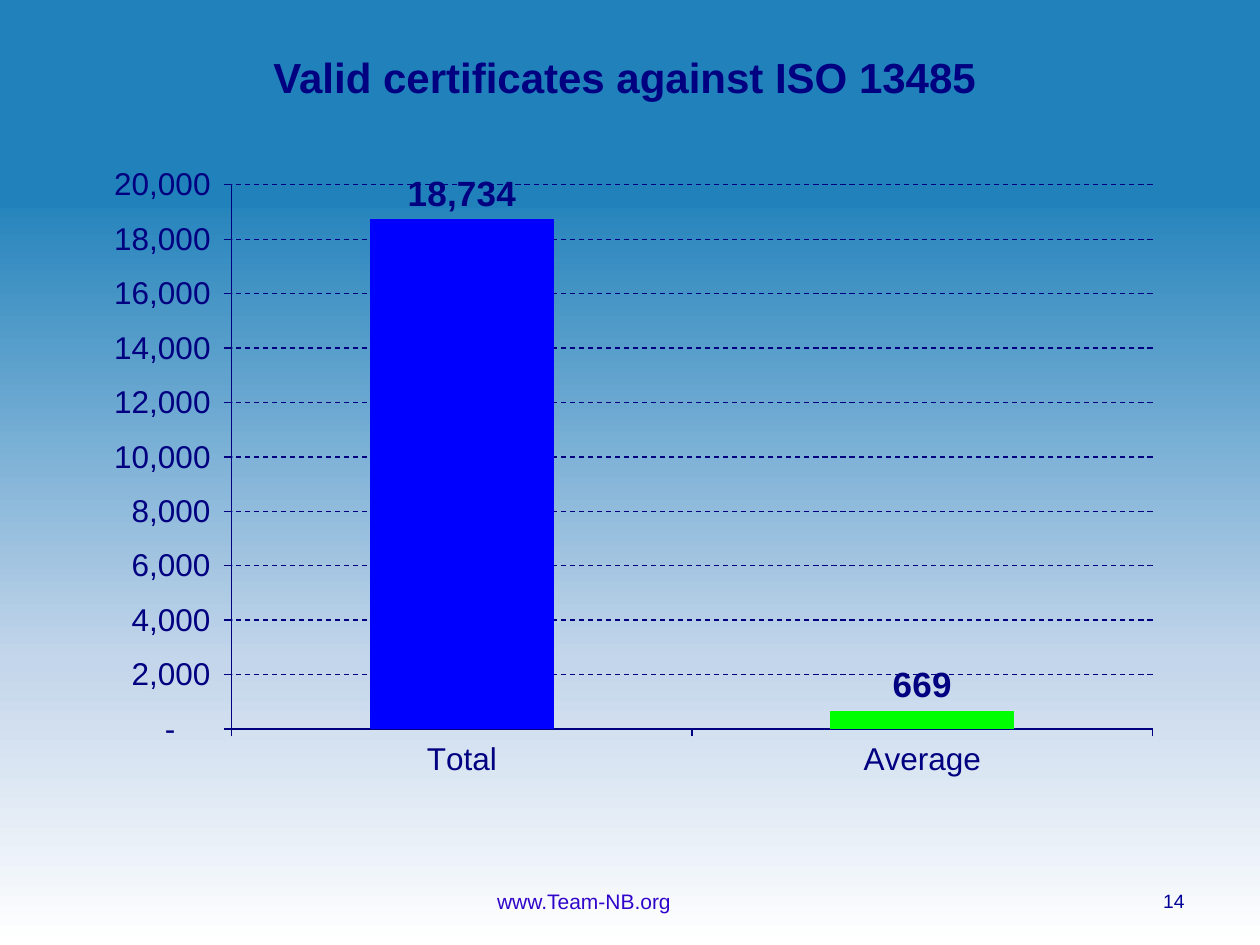
from copy import deepcopy
from dataclasses import dataclass

from lxml.etree import SubElement
from pptx import Presentation
from pptx.chart.data import CategoryChartData
from pptx.dml.color import RGBColor
from pptx.enum.chart import XL_CHART_TYPE as ChartType
from pptx.enum.chart import XL_LABEL_POSITION as LabelPosition
from pptx.enum.chart import XL_TICK_MARK as TickMark
from pptx.enum.dml import MSO_LINE as Dash
from pptx.enum.shapes import MSO_SHAPE as Shape
from pptx.enum.text import MSO_ANCHOR as Anchor
from pptx.enum.text import PP_ALIGN as Align
from pptx.oxml.ns import qn
from pptx.util import Inches, Pt


@dataclass(frozen=True)
class Theme:
    font: str = "Arial"
    navy: str = "000080"
    band: str = "2182BB"
    link: str = "2F05CB"
    number: str = "000099"
    bars: tuple = ("0000FF", "00FF00")
    backdrop: tuple = ((20, "2182BB"), (70, "C4D6EB"), (100, "FFFFFF"))
    title_size: int = 24
    label_size: int = 20
    axis_size: int = 18
    footer_size: int = 12
    number_size: int = 11


THEME = Theme()
NUMBER_FORMAT = r'_ * #,##0_ ;_ * \-#,##0_ ;_ * "-"??_ ;_ '


def color(code):
    return RGBColor.from_string(code)


def style_font(font, size, code, bold=False):
    font.name = THEME.font
    font.size = Pt(size)
    font.bold = bold
    font.color.rgb = color(code)


def style_line(line, code, width):
    line.color.rgb = color(code)
    line.width = Pt(width)


def set_backdrop(page):
    """Fill the page with a gradient running from top to bottom."""
    fill = page.background.fill
    fill.gradient()
    fill.gradient_angle = 270
    stop_list = page.element.find(".//" + qn("a:gsLst"))
    stop_list.append(deepcopy(stop_list[0]))
    for stop, (percent, code) in zip(fill.gradient_stops, THEME.backdrop):
        stop.position = percent / 100
        stop.color.rgb = color(code)


def add_band(page, width, height):
    band = page.shapes.add_shape(Shape.RECTANGLE, 0, 0, width, height)
    band.shadow.inherit = False
    band.fill.solid()
    band.fill.fore_color.rgb = color(THEME.band)
    style_line(band.line, THEME.band, 2)


def add_text(page, text, place, size, code, align, anchor=Anchor.MIDDLE, bold=False):
    box = page.shapes.add_textbox(*map(Inches, place))
    frame = box.text_frame
    frame.word_wrap = True
    frame.vertical_anchor = anchor
    para = frame.paragraphs[0]
    para.text = text
    para.alignment = align
    style_font(para.font, size, code, bold)


def style_axis(axis):
    axis.major_tick_mark = TickMark.OUTSIDE
    axis.minor_tick_mark = TickMark.NONE
    style_font(axis.tick_labels.font, THEME.axis_size, THEME.navy)
    style_line(axis.format.line, THEME.navy, 0.75)


def place_plot(chart, **shares):
    """Fix the inner plot area as shares of the chart's width and height."""
    plot_area = chart.element.find(".//" + qn("c:plotArea"))
    layout = plot_area.find(qn("c:layout"))
    if layout is None:
        layout = SubElement(plot_area, qn("c:layout"))
        plot_area.insert(0, layout)
    manual = SubElement(layout, qn("c:manualLayout"))
    settings = {"layoutTarget": "inner", "xMode": "edge", "yMode": "edge", **shares}
    for name, value in settings.items():
        SubElement(manual, qn(f"c:{name}")).set("val", str(value))


def add_certificate_chart(page, place):
    data = CategoryChartData()
    data.categories = ["Total", "Average"]
    data.add_series("Series 1", [18734, 669])
    chart = page.shapes.add_chart(
        ChartType.COLUMN_CLUSTERED, *map(Inches, place), data
    ).chart
    chart.has_legend = False
    chart.has_title = False
    chart.font.name = THEME.font
    place_plot(chart, x=0.135, y=0.047, w=0.844, h=0.857)

    style_axis(chart.category_axis)
    value_axis = chart.value_axis
    style_axis(value_axis)
    value_axis.minimum_scale = 0
    value_axis.maximum_scale = 20000
    value_axis.major_unit = 2000
    value_axis.tick_labels.number_format = NUMBER_FORMAT
    value_axis.tick_labels.number_format_is_linked = False
    grid_line = value_axis.major_gridlines.format.line
    style_line(grid_line, THEME.navy, 0.75)
    grid_line.dash_style = Dash.DASH

    plot = chart.plots[0]
    plot.gap_width = 150
    plot.vary_by_categories = False
    series = plot.series[0]
    for index, code in enumerate(THEME.bars):
        fill = series.points[index].format.fill
        fill.solid()
        fill.fore_color.rgb = color(code)

    labels = series.data_labels
    labels.show_value = True
    labels.position = LabelPosition.OUTSIDE_END
    labels.number_format = NUMBER_FORMAT
    labels.number_format_is_linked = False
    style_font(labels.font, THEME.label_size, THEME.navy, bold=True)


def main():
    deck = Presentation()
    deck.slide_width = Inches(10)
    deck.slide_height = Inches(7.5)
    page = deck.slides.add_slide(deck.slide_layouts[6])
    set_backdrop(page)
    add_band(page, deck.slide_width, Inches(1.64))
    add_text(page, "14", (7.17, 6.95, 2.33, 0.4),
             THEME.number_size, THEME.number, Align.RIGHT)
    add_text(page, "www.Team-NB.org", (3.05, 6.95, 3.17, 0.4),
             THEME.footer_size, THEME.link, Align.CENTER)
    add_certificate_chart(page, (0.67, 1.23, 8.66, 5.04))
    add_text(page, "Valid certificates against ISO 13485 ", (0.28, 0.36, 9.45, 0.5),
             THEME.title_size, THEME.navy, Align.CENTER, Anchor.TOP, bold=True)
    deck.save("out.pptx")


if __name__ == "__main__":
    main()
